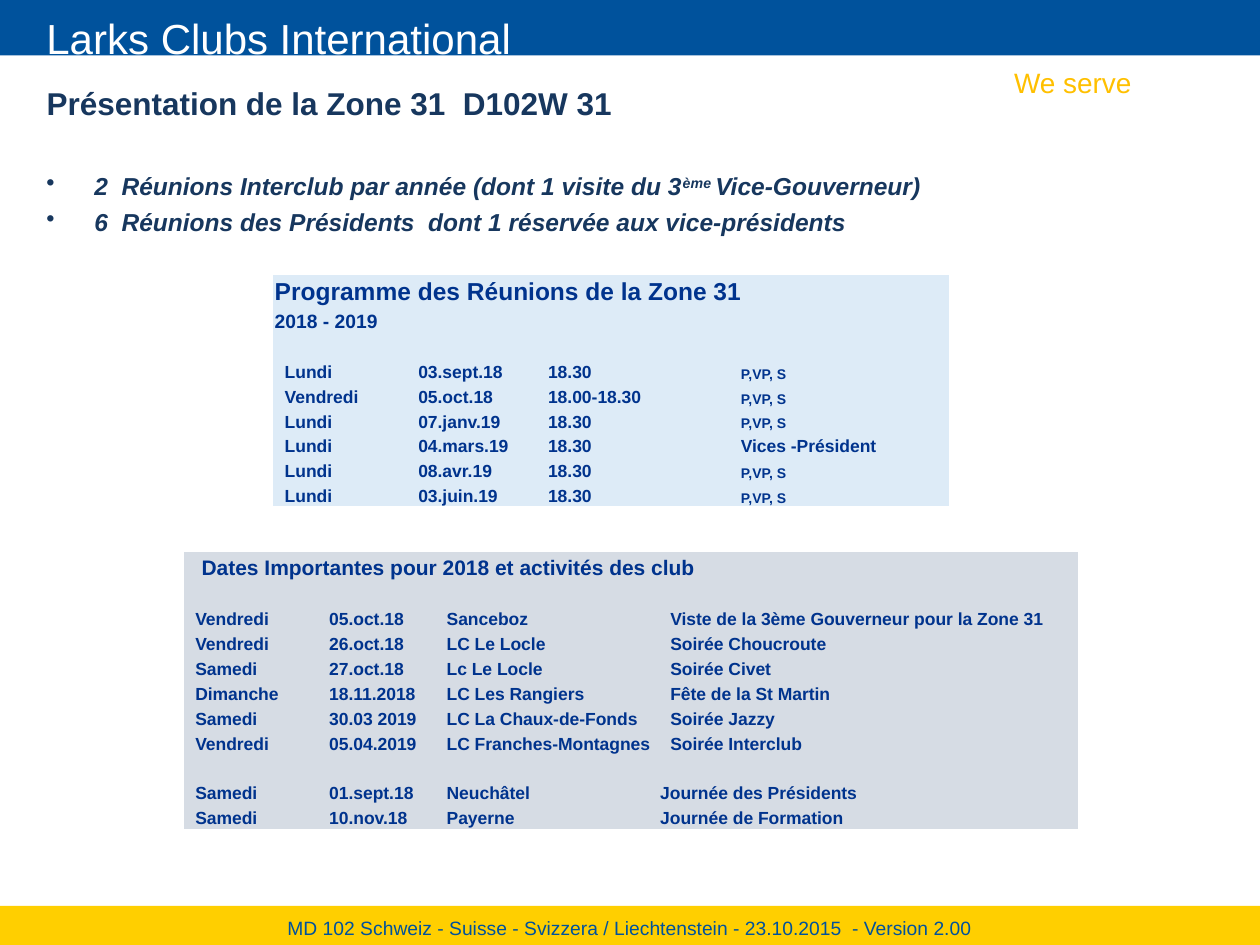
from dataclasses import dataclass

from lxml import etree
from pptx import Presentation
from pptx.dml.color import RGBColor
from pptx.enum.shapes import MSO_SHAPE
from pptx.enum.text import MSO_ANCHOR, PP_ALIGN
from pptx.oxml.ns import qn
from pptx.util import Inches, Pt

RECTANGLE = MSO_SHAPE.RECTANGLE
BOTTOM, MIDDLE = MSO_ANCHOR.BOTTOM, MSO_ANCHOR.MIDDLE
LEFT, CENTER = PP_ALIGN.LEFT, PP_ALIGN.CENTER

SLIDE_WIDTH, SLIDE_HEIGHT = Inches(10), Inches(7.5)
COLUMN, ROW = SLIDE_WIDTH // 100, SLIDE_HEIGHT // 75
TITLE_ONLY = 5
FONT = "Arial"
PLAIN_TABLE_STYLE = "{2D5ABB26-0587-4C30-8999-92F81FD0307C}"
COLORS = {
    "blue": "00529C", "white": "FFFFFF", "amber": "FFC000", "yellow": "FFCF00",
    "navy": "17375E", "table_text": "00338D", "sky": "DDEBF7", "grey": "D6DCE4",
}
NARROW, MEDIUM, WIDE = Inches(0.01), Inches(0.09), Inches(0.19)


@dataclass
class Box:
    """Hold an area in grid columns and rows."""
    left: float
    top: float
    width: float
    height: float

    def lengths(self):
        """Return left, top, width and height as slide lengths."""
        return (int(self.left * COLUMN), int(self.top * ROW),
                int(self.width * COLUMN), int(self.height * ROW))


@dataclass
class Entry:
    """Describe the content of one table cell."""
    text: str = ""
    inset: int = NARROW
    size: float = 10
    span: int = 1


def color(name):
    """Return a named colour."""
    return RGBColor.from_string(COLORS[name])


def style(paragraph, size, color_name, bold=False, italic=False):
    """Set the font of a paragraph."""
    font = paragraph.font
    font.name, font.size, font.bold, font.italic = FONT, Pt(size), bold, italic
    font.color.rgb = color(color_name)


def add_bar(slide, box, color_name):
    """Draw a plain coloured bar."""
    bar = slide.shapes.add_shape(RECTANGLE, *box.lengths())
    bar.shadow.inherit = False
    bar.fill.solid()
    bar.fill.fore_color.rgb = color(color_name)
    bar.line.fill.background()


def add_label(slide, box, text, size, color_name, align=LEFT, wrap=True):
    """Write a single line of text."""
    frame = slide.shapes.add_textbox(*box.lengths()).text_frame
    frame.word_wrap = wrap
    paragraph = frame.paragraphs[0]
    paragraph.text, paragraph.alignment = text, align
    style(paragraph, size, color_name)


def add_header(slide, box):
    """Draw the top bar with the club name and the motto under it."""
    add_bar(slide, box, "blue")
    add_label(slide, Box(box.left + 2.7, box.top + 0.5, box.width - 5.8, 5.1),
              "Larks Clubs International", 24, "white")
    add_label(slide, Box(box.left + 79.5, box.top + box.height + 0.3, 11.5, 3.7),
              "We serve", 16, "amber", wrap=False)


def add_footer(slide, box):
    """Draw the bottom bar with its centred line."""
    add_bar(slide, box, "yellow")
    add_label(slide, Box(box.left, box.top + 0.3, box.width, 2.9),
              "MD 102 Schweiz - Suisse - Svizzera / Liechtenstein - 23.10.2015  - Version 2.00",
              11, "blue", CENTER)


def fill_title(slide, box, text):
    """Place and format the title placeholder."""
    title = slide.shapes.title
    title.left, title.top, title.width, title.height = box.lengths()
    title.text_frame.text = text
    title.text_frame.vertical_anchor = MIDDLE
    paragraph = title.text_frame.paragraphs[0]
    paragraph.alignment = LEFT
    style(paragraph, 18, "navy", bold=True)


def add_bullets(slide, box, items):
    """Write bulleted items, each a list of (text, is_superscript) runs."""
    frame = slide.shapes.add_textbox(*box.lengths()).text_frame
    frame.word_wrap = True
    for index, runs in enumerate(items):
        paragraph = frame.add_paragraph() if index else frame.paragraphs[0]
        properties = paragraph._p.get_or_add_pPr()
        properties.set("marL", str(Inches(0.38)))
        properties.set("indent", str(-Inches(0.38)))
        etree.SubElement(properties, qn("a:buChar")).set("char", "•")
        if index:
            paragraph.space_before = Pt(3.4)
        style(paragraph, 14, "navy", bold=True, italic=True)
        for text, is_superscript in runs:
            run = paragraph.add_run()
            run.text = text
            if is_superscript:
                run.font._element.set("baseline", "30000")


def fill_cell(cell, entry, fill_name):
    """Format one table cell and write its entry."""
    cell.fill.solid()
    cell.fill.fore_color.rgb = color(fill_name)
    cell.vertical_anchor = BOTTOM
    cell.margin_left, cell.margin_right = entry.inset, NARROW
    cell.margin_top, cell.margin_bottom = NARROW, 0
    paragraph = cell.text_frame.paragraphs[0]
    if entry.text:
        paragraph.text = entry.text
        style(paragraph, entry.size, "table_text", bold=True)
    else:
        end = etree.SubElement(paragraph._p, qn("a:endParaRPr"))
        end.set("sz", str(entry.size * 100))


def add_schedule(slide, box, column_weights, heading_heights, rows, fill_name):
    """Build a table whose rows below the headings share the remaining height."""
    left, top, width, height = box.lengths()
    table = slide.shapes.add_table(len(rows), len(column_weights), left, top, width, height).table
    table._tbl.tblPr.find(qn("a:tableStyleId")).text = PLAIN_TABLE_STYLE
    table.first_row = table.horz_banding = False
    for column, weight in zip(table.columns, column_weights):
        column.width = int(width * weight / sum(column_weights))
    headings = [int(rows_high * ROW) for rows_high in heading_heights]
    common = (height - sum(headings)) // (len(rows) - len(headings))
    for row_index, entries in enumerate(rows):
        table.rows[row_index].height = headings[row_index] if row_index < len(headings) else common
        cells = {}
        position = 0
        for entry in entries:
            cells[position] = entry
            position += entry.span
        for index in range(len(column_weights)):
            fill_cell(table.cell(row_index, index), cells.get(index, Entry()), fill_name)
        for index, entry in cells.items():
            if entry.span > 1:
                table.cell(row_index, index).merge(table.cell(row_index, index + entry.span - 1))


def add_programme(slide, box):
    """Build the table of zone meetings."""
    everyone = Entry("P,VP, S", size=8)
    vice_presidents = Entry("Vices -Président", span=2)
    meetings = [
        ("Lundi", "03.sept.18", "18.30", everyone),
        ("Vendredi", "05.oct.18", "18.00-18.30", everyone),
        ("Lundi", "07.janv.19", "18.30", everyone),
        ("Lundi", "04.mars.19", "18.30", vice_presidents),
        ("Lundi", "08.avr.19", "18.30", everyone),
        ("Lundi", "03.juin.19", "18.30", everyone),
    ]
    rows = [[Entry("Programme des Réunions de la Zone 31", size=14, span=4)],
            [Entry("2018 - 2019", size=11)], []]
    rows += [[Entry(day, MEDIUM), Entry(date, WIDE), Entry(time, WIDE), group]
             for day, date, time, group in meetings]
    add_schedule(slide, box, [0.96, 1.03, 1.71, 0.83, 0.83], [2.5, 2.1], rows, "sky")


def add_agenda(slide, box):
    """Build the table of important dates."""
    club_events = [
        ("Vendredi", "05.oct.18", "Sanceboz", "Viste de la 3ème Gouverneur pour la Zone 31", 4),
        ("Vendredi", "26.oct.18", "LC Le Locle", "Soirée Choucroute", 2),
        ("Samedi", "27.oct.18", "Lc Le Locle", "Soirée Civet", 2),
        ("Dimanche", "18.11.2018", "LC Les Rangiers", "Fête de la St Martin", 2),
        ("Samedi", "30.03 2019", "LC La Chaux-de-Fonds", "Soirée Jazzy", 2),
        ("Vendredi", "05.04.2019", "LC Franches-Montagnes", "Soirée Interclub", 2),
    ]
    training_days = [
        ("Samedi", "01.sept.18", "Neuchâtel", "Journée des Présidents", 2),
        ("Samedi", "10.nov.18", "Payerne", "Journée de Formation", 2),
    ]
    rows = [[Entry("Dates Importantes pour 2018 et activités des club", Inches(0.14), 12, 4)]]
    for events, inset in ((club_events, MEDIUM), (training_days, NARROW)):
        rows.append([])
        rows += [[Entry(day, MEDIUM), Entry(date, WIDE), Entry(place, MEDIUM),
                  Entry(event, inset, span=span)]
                 for day, date, place, event, span in events]
    add_schedule(slide, box, [0.96, 1.03, 1.77] + [0.83] * 4, [2.2], rows, "grey")


def main():
    """Build and save the presentation."""
    presentation = Presentation()
    presentation.slide_width, presentation.slide_height = SLIDE_WIDTH, SLIDE_HEIGHT
    slide = presentation.slides.add_slide(presentation.slide_layouts[TITLE_ONLY])
    add_header(slide, Box(0, 0, 100, 4.4))
    add_footer(slide, Box(0, 71.9, 100, 3.1))
    add_bullets(slide, Box(2.7, 13.1, 94.5, 6.5), [
        [("2  Réunions Interclub par année (dont 1 visite du 3", False),
         ("ème ", True), ("Vice-Gouverneur)", False)],
        [("6  Réunions des Présidents  dont 1 réservée aux vice-présidents", False)],
    ])
    fill_title(slide, Box(2.7, 6.2, 75.2, 4), "Présentation de la Zone 31  D102W 31")
    add_programme(slide, Box(21.7, 21.8, 53.6, 18.4))
    add_agenda(slide, Box(14.6, 43.8, 71, 22))
    presentation.save("out.pptx")


if __name__ == "__main__":
    main()
